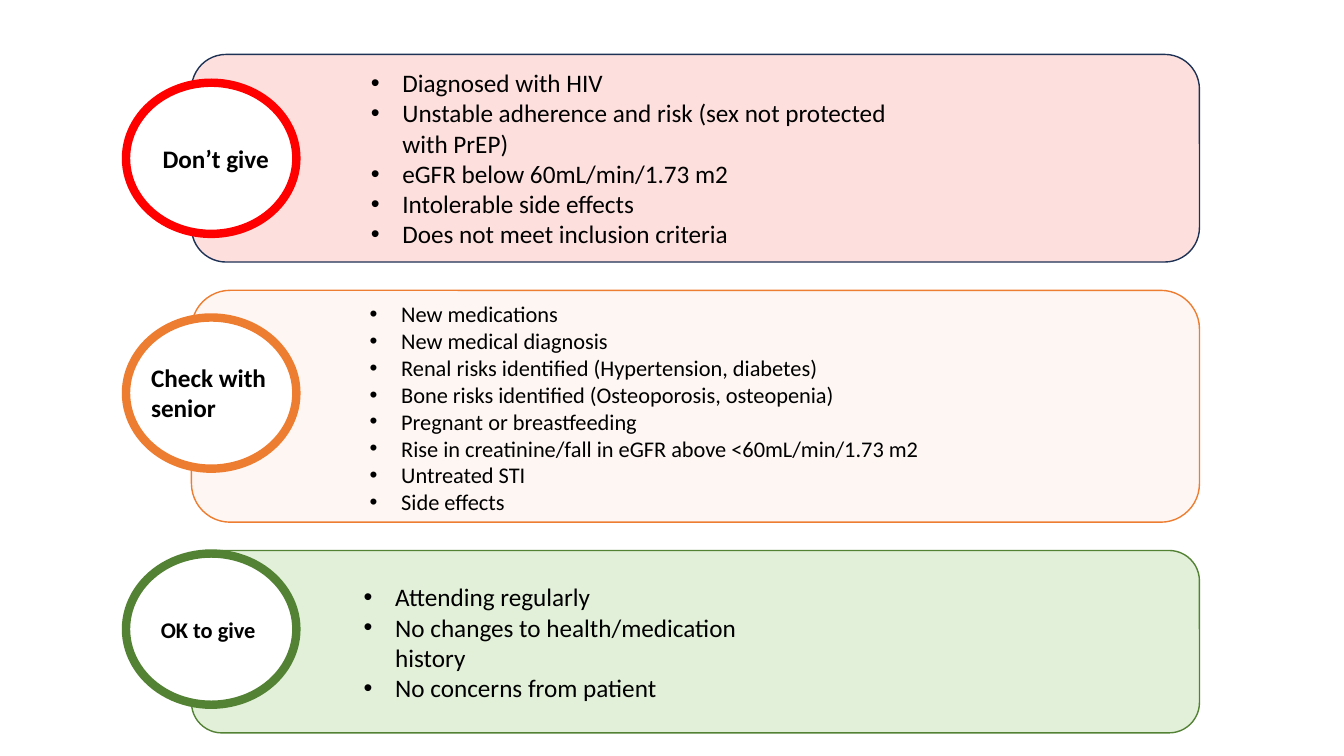
from dataclasses import dataclass

from lxml import etree
from pptx import Presentation
from pptx.dml.color import RGBColor
from pptx.enum.shapes import MSO_SHAPE
from pptx.enum.text import MSO_ANCHOR, PP_ALIGN
from pptx.oxml.ns import qn
from pptx.util import Pt

ROUNDED, OVAL, RECTANGLE = MSO_SHAPE.ROUNDED_RECTANGLE, MSO_SHAPE.OVAL, MSO_SHAPE.RECTANGLE
LEFT, CENTER, TOP = PP_ALIGN.LEFT, PP_ALIGN.CENTER, MSO_ANCHOR.TOP
FONT = "Calibri"
COLORS = {
    "white": "FFFFFF", "black": "000000",
    "rose": "FA9C93", "navy": "1E3256", "red": "FF0000",
    "peach": "FBE5D6", "orange": "ED7D31",
    "mint": "E2F0D9", "green": "548235",
}
PANEL_LEFT, PANEL_TOP, PANEL_WIDTH, PANEL_GAP = 136.8, 38.9, 720, 20.2
RING_LEFT, RING_WIDTH, RING_HEIGHT = -46.8, 121.7, 108
BULLET_INDENT, BULLET_RIGHT_INSET = 22.5, 44


@dataclass
class Category:
    """One advice panel; the boxes are relative to the panel's top left corner."""
    label: str
    label_box: tuple
    label_size: int
    label_align: int
    label_indent: float
    height: float
    fill: str
    alpha: int
    border: str
    ring: str
    ring_top: float
    bullets: list
    bullet_box: tuple
    bullet_size: int


CATEGORIES = [
    Category("Don’t give", (-36, 59.8, 138.2, 28.8), 18, LEFT, 8.2,
             148.3, "rose", 31, "navy", "red", 20.2,
             ["Diagnosed with HIV",
              "Unstable adherence and risk (sex not protected with PrEP)",
              "eGFR below 60mL/min/1.73 m2",
              "Intolerable side effects",
              "Does not meet inclusion criteria"],
             (121, 5.8, 435.6, 159.8), 18),
    Category("Check with senior", (-36, 47.5, 138.2, 51.1), 18, LEFT, 0,
             165.6, "peach", 31, "orange", "orange", 19.4,
             ["New medications",
              "New medical diagnosis",
              "Renal risks identified (Hypertension, diabetes)",
              "Bone risks identified (Osteoporosis, osteopenia)",
              "Pregnant or breastfeeding",
              "Rise in creatinine/fall in eGFR above <60mL/min/1.73 m2",
              "Untreated STI",
              "Side effects"],
             (120.2, 3.6, 511.9, 200.9), 16),
    Category("OK to give", (-33.1, 43.2, 90, 26.6), 16, CENTER, 0,
             130.3, "mint", 100, "green", "green", 2.2,
             ["Attending regularly",
              "No changes to health/medication history",
              "No concerns from patient"],
             (115.9, 18.7, 362.9, 72.7), 18),
]


def color(name):
    """Return the named colour."""
    return RGBColor.from_string(COLORS[name])


def add_outlined(slide, kind, box, fill, line, line_width, alpha=100):
    """Add a filled preset shape with an outline."""
    shape = slide.shapes.add_shape(kind, *map(Pt, box))
    shape.shadow.inherit = False
    shape.fill.solid()
    shape.fill.fore_color.rgb = color(fill)
    if alpha < 100:
        fill_color = shape.fill._xPr.find(".//" + qn("a:srgbClr"))
        etree.SubElement(fill_color, qn("a:alpha"), val=str(alpha * 1000))
    shape.line.color.rgb = color(line)
    shape.line.width = Pt(line_width)


def add_run(paragraph, text, size, bold=False):
    """Add one black run of text."""
    run = paragraph.add_run()
    run.text = text
    run.font.name = FONT
    run.font.size = Pt(size)
    run.font.bold = bold
    run.font.color.rgb = color("black")


def add_text_frame(slide, box):
    """Add a wrapping text box and return its frame."""
    frame = slide.shapes.add_textbox(*map(Pt, box)).text_frame
    frame.word_wrap = True
    frame.vertical_anchor = TOP
    return frame


def add_label(slide, category, box):
    """Add the bold label inside the ring."""
    paragraph = add_text_frame(slide, box).paragraphs[0]
    paragraph.alignment = category.label_align
    if category.label_indent:
        paragraph._p.get_or_add_pPr().set("marL", str(Pt(category.label_indent)))
    add_run(paragraph, category.label, category.label_size, bold=True)


def add_bullets(slide, category, box):
    """Add the bulleted criteria of a panel."""
    frame = add_text_frame(slide, box)
    frame.margin_right = Pt(BULLET_RIGHT_INSET)
    for index, text in enumerate(category.bullets):
        paragraph = frame.add_paragraph() if index else frame.paragraphs[0]
        properties = paragraph._p.get_or_add_pPr()
        properties.set("marL", str(Pt(BULLET_INDENT)))
        properties.set("indent", str(-Pt(BULLET_INDENT)))
        etree.SubElement(properties, qn("a:buFont"), typeface="Arial")
        etree.SubElement(properties, qn("a:buChar"), char="•")
        add_run(paragraph, text, category.bullet_size)


def add_panel(slide, category, left, top):
    """Add a category panel with its ring, label and criteria."""
    def placed(box):
        """Shift a panel-relative box onto the slide."""
        return left + box[0], top + box[1], box[2], box[3]

    add_outlined(slide, ROUNDED, (left, top, PANEL_WIDTH, category.height),
                 category.fill, category.border, 1, category.alpha)
    ring_box = placed((RING_LEFT, category.ring_top, RING_WIDTH, RING_HEIGHT))
    add_outlined(slide, OVAL, ring_box, "white", category.ring, 6)
    add_label(slide, category, placed(category.label_box))
    add_bullets(slide, category, placed(category.bullet_box))


def main():
    """Build and save the slide."""
    presentation = Presentation()
    presentation.slide_width, presentation.slide_height = Pt(960), Pt(540)
    slide = presentation.slides.add_slide(presentation.slide_layouts[6])
    top = PANEL_TOP
    for category in CATEGORIES:
        add_panel(slide, category, PANEL_LEFT, top)
        top += category.height + PANEL_GAP
    presentation.save("out.pptx")


if __name__ == "__main__":
    main()
